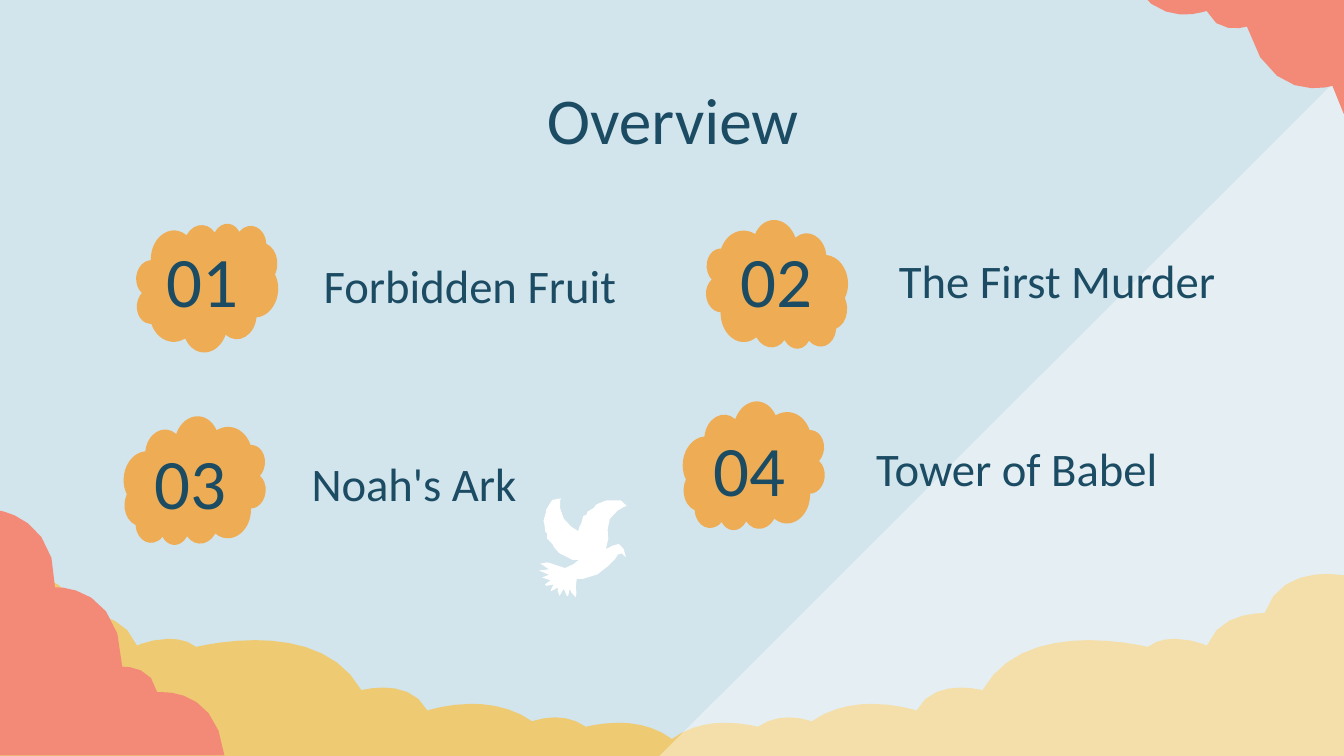
import collections
import dataclasses
import math

import lxml.etree
import pptx
import pptx.dml.color
import pptx.enum.shapes
import pptx.enum.text
import pptx.oxml.ns
import pptx.util

PX = 9144
Box = collections.namedtuple("Box", "left top width height")
Entry = collections.namedtuple("Entry", "number label box rotation flipped number_offset label_offset label_width")


@dataclasses.dataclass(frozen=True)
class Theme:
    font: str = "Calibri"
    sky: str = "D2E4EC"
    ink: str = "1B4C63"
    coral: str = "F38A77"
    sand: str = "EECB73"
    amber: str = "EEAD55"
    white: str = "FFFFFF"
    title_size: int = 35
    number_size: int = 38
    label_size: int = 25


THEME = Theme()
CENTER = pptx.enum.text.PP_ALIGN.CENTER
LEFT = pptx.enum.text.PP_ALIGN.LEFT
TOP = pptx.enum.text.MSO_ANCHOR.TOP
MIDDLE = pptx.enum.text.MSO_ANCHOR.MIDDLE
CLOUD = pptx.enum.shapes.MSO_SHAPE.CLOUD
TRIANGLE = pptx.enum.shapes.MSO_SHAPE.ISOSCELES_TRIANGLE

BANK_HALF = [
    (500, 122), (488, 113, 473, 110, 461, 110), (447, 110, 436, 113, 436, 113),
    (429, 108, 421, 106, 413, 106), (404, 106, 396, 109, 396, 109),
    (382, 99, 365, 96, 351, 96), (333, 96, 318, 101, 318, 101),
    (311, 87, 296, 84, 285, 84), (276, 84, 269, 86, 269, 86),
    (252, 56, 218, 49, 190, 49), (166, 49, 146, 54, 146, 54),
    (140, 49, 132, 48, 125, 48), (113, 48, 102, 53, 102, 53),
    (93, 30, 67, 29, 59, 29), (51, 4, 27, 0, 12, 0), (0, 1), (0, 135),
]
CORNER_CLOUD = [
    (0, 0), (0, 182), (167, 182), (162, 139, 132, 135, 121, 135), (117, 135),
    (114, 117, 96, 116, 91, 116), (90, 58, 47, 57, 42, 57), (41, 57), (42, 6, 0, 0, 0, 0),
]
RIGHT_WING = [
    (63, 3), (58, 3), (54, 2, 51, 4, 51, 4), (46, 4, 44, 9, 44, 9),
    (39, 10, 39, 14, 39, 14), (39, 14, 34, 15, 35, 21), (35, 21, 30, 28, 33, 38),
    (36, 47, 43, 51, 47, 52), (50, 52), (50, 52, 48, 47, 52, 39),
    (56, 31, 51, 26, 55, 17), (60, 9, 67, 7, 67, 7), (63, 3),
]
BODY = [
    (60, 35), (55, 35, 53, 39, 46, 40), (39, 41, 30, 45, 22, 56), (20, 61),
    (20, 61, 34, 64, 44, 58), (54, 51, 58, 45, 58, 45), (58, 45, 59, 41, 62, 42),
    (65, 45), (64, 41), (64, 41, 64, 37, 60, 35),
]
TAIL = [
    (30, 50), (22, 54), (10, 50), (5, 51), (11, 55), (4, 56), (11, 59), (6, 61),
    (12, 63), (8, 66), (9, 67), (14, 66), (12, 70), (12, 71), (17, 68),
    (17, 68, 16, 73, 18, 74), (21, 69), (23, 74), (24, 74), (25, 69),
    (25, 69, 27, 74, 29, 75), (31, 75, 28, 66, 30, 62), (32, 59, 36, 57, 36, 57),
]
LEFT_WING = [
    (19, 3), (13, 1, 11, 7, 11, 7), (8, 9, 8, 14, 8, 14), (5, 18, 7, 22, 7, 22),
    (6, 27, 9, 29, 9, 29), (9, 29, 7, 35, 13, 37), (13, 37, 15, 44, 25, 47),
    (27, 48), (40, 52, 47, 42, 47, 42), (46, 42, 41, 40, 37, 33),
    (32, 25, 26, 26, 21, 18), (16, 9, 19, 3, 19, 3),
]
DOVE_PARTS = [
    (RIGHT_WING, Box(31, 0, 30, 51)),
    (BODY, Box(24, 32, 40, 35)),
    (TAIL, Box(0, 47, 34, 27)),
    (LEFT_WING, Box(3, 5, 47, 42)),
]
ENTRIES = [
    Entry("01", "Forbidden Fruit", Box(101, 165, 106, 97), 5.2, False, (-13, 1), (130, 18), 264),
    Entry("02", "The First Murder", Box(525, 164, 106, 97), 174.8, True, (-10, 2), (134, 15), 287),
    Entry("03", "Noah's Ark", Box(92, 310, 106, 97), 185.2, False, (-13, 6), (130, 20), 287),
    Entry("04", "Tower of Babel", Box(508, 299, 106, 97), 185.2, False, (-13, 7), (134, 20), 272),
]


def emu(box):
    return [length * PX for length in box]


def color(value):
    return pptx.dml.color.RGBColor.from_string(value)


def paint(shape, fill, rotation=0):
    shape.shadow.inherit = False
    shape.fill.solid()
    shape.fill.fore_color.rgb = color(fill)
    shape.line.fill.background()
    shape.rotation = rotation


def trace(path):
    points = [path[0]]
    for segment in path[1:]:
        if len(segment) == 2:
            points.append(segment)
            continue
        controls = [points[-1], segment[:2], segment[2:4], segment[4:]]
        steps = max(1, round(math.sqrt(math.dist(controls[0], controls[3]) / 2)))
        for step in range(1, steps + 1):
            t = step / steps
            weights = ((1 - t) ** 3, 3 * t * (1 - t) ** 2, 3 * t * t * (1 - t), t ** 3)
            points.append(tuple(sum(w * c[axis] for w, c in zip(weights, controls)) for axis in (0, 1)))
    return points


def turn(points, degrees):
    cosine, sine = math.cos(math.radians(degrees)), math.sin(math.radians(degrees))
    return [(x * cosine - y * sine, x * sine + y * cosine) for x, y in points]


def add_outline(shapes, box, points, fill, rotation=0):
    scaled = [(x * PX, y * PX) for x, y in points]
    builder = shapes.build_freeform(*scaled[0])
    builder.add_line_segments(scaled[1:], close=True)
    shape = builder.convert_to_shape()
    shape.left, shape.top, shape.width, shape.height = emu(box)
    paint(shape, fill, rotation)


def add_text(slide, box, text, size, alignment=LEFT, anchor=MIDDLE):
    frame = slide.shapes.add_textbox(*emu(box)).text_frame
    frame.word_wrap = True
    frame.vertical_anchor = anchor
    frame.margin_left = frame.margin_right = frame.margin_top = frame.margin_bottom = 10 * PX
    paragraph = frame.paragraphs[0]
    paragraph.text = text
    paragraph.alignment = alignment
    paragraph.font.name = THEME.font
    paragraph.font.size = pptx.util.Pt(size)
    paragraph.font.color.rgb = color(THEME.ink)


def add_cloud_bank(slide, box):
    half = trace(BANK_HALF)
    mirrored = [(box.width - x, y) for x, y in reversed(half)]
    add_outline(slide.shapes, box, half + mirrored, THEME.sand)


def add_light_beam(slide, box):
    beam = slide.shapes.add_shape(TRIANGLE, *emu(box))
    paint(beam, THEME.white, 15)
    fill_color = beam._element.spPr.find(".//" + pptx.oxml.ns.qn("a:srgbClr"))
    lxml.etree.SubElement(fill_color, pptx.oxml.ns.qn("a:alpha"), val="40000")


def add_entry(slide, entry):
    box = entry.box
    cloud = slide.shapes.add_shape(CLOUD, *emu(box))
    paint(cloud, THEME.amber, entry.rotation)
    if entry.flipped:
        cloud._element.spPr.get_or_add_xfrm().set("flipH", "1")
    number_x, number_y = entry.number_offset
    label_x, label_y = entry.label_offset
    add_text(slide, Box(box.left + number_x, box.top + number_y, 126, 84),
             entry.number, THEME.number_size, CENTER)
    add_text(slide, Box(box.left + label_x, box.top + label_y, entry.label_width, 58),
             entry.label, THEME.label_size)


def add_dove(slide, left, top):
    group = slide.shapes.add_group_shape()
    for path, part in DOVE_PARTS:
        box = part._replace(left=left + part.left, top=top + part.top)
        add_outline(group.shapes, box, turn(trace(path), -15), THEME.white, 15)


def main():
    presentation = pptx.Presentation()
    presentation.slide_width = 1000 * PX
    presentation.slide_height = presentation.slide_width * 9 // 16
    slide = presentation.slides.add_slide(presentation.slide_layouts[6])
    slide.background.fill.solid()
    slide.background.fill.fore_color.rgb = color(THEME.sky)
    add_cloud_bank(slide, Box(0, 427, 1000, 136))
    corner_points = trace(CORNER_CLOUD)
    add_outline(slide.shapes, Box(0, 380, 167, 182), corner_points, THEME.coral)
    add_light_beam(slide, Box(535, 24, 790, 683))
    add_outline(slide.shapes, Box(858, -49, 167, 182), corner_points, THEME.coral, 165)
    add_text(slide, Box(79, 49, 843, 63), "Overview", THEME.title_size, CENTER, TOP)
    for entry in ENTRIES:
        add_entry(slide, entry)
    add_dove(slide, 400, 369)
    presentation.save("out.pptx")


if __name__ == "__main__":
    main()
